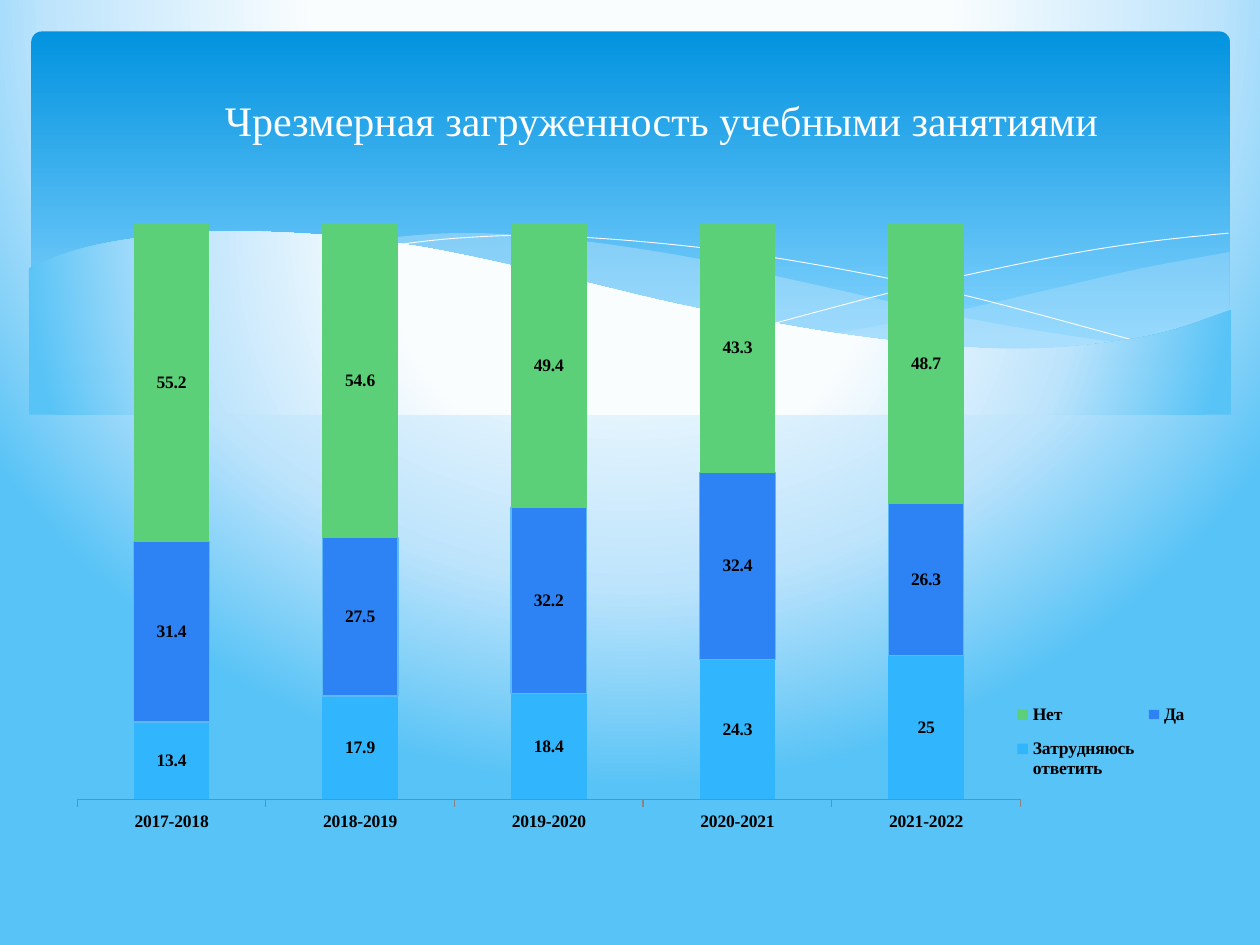
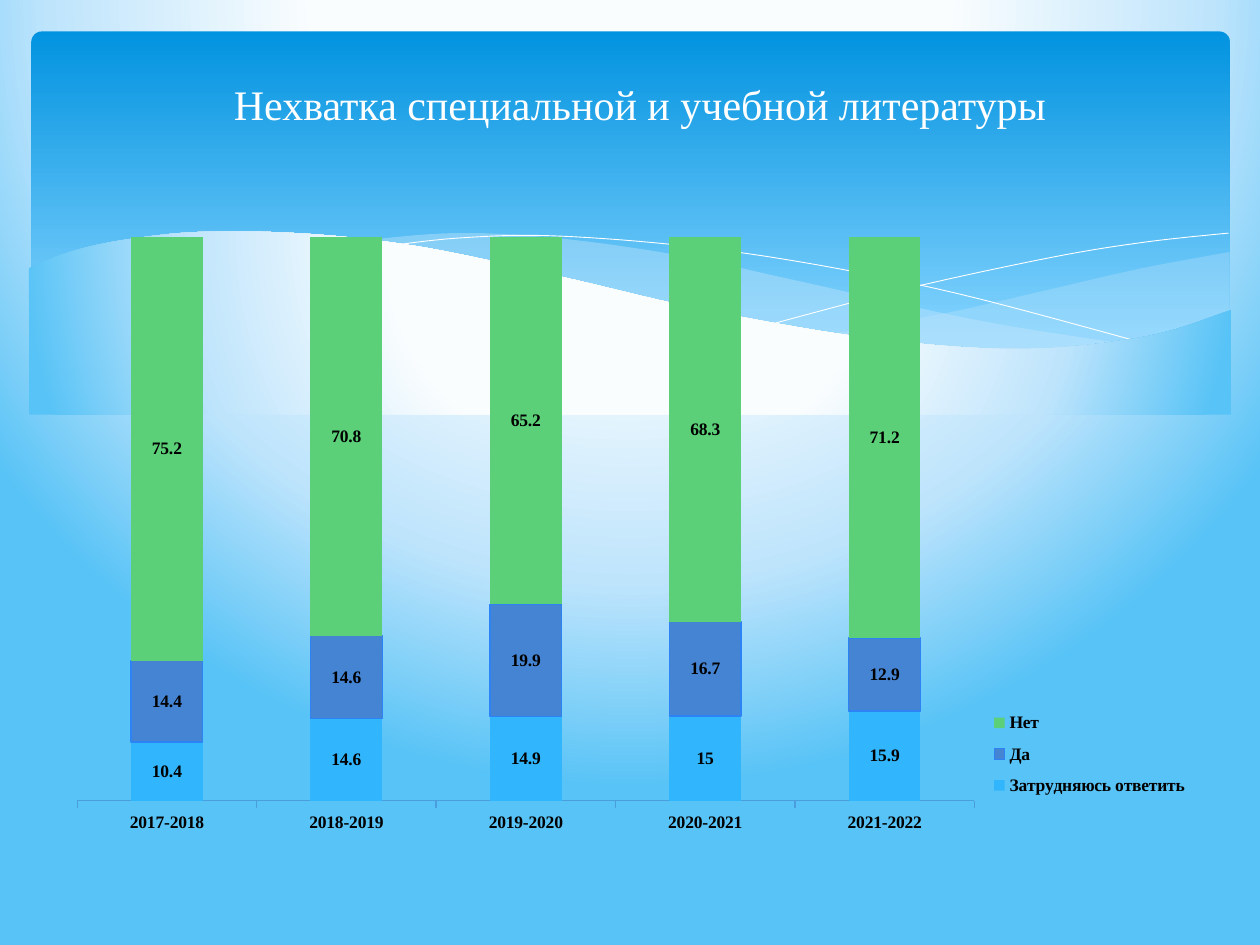
from dataclasses import dataclass
from typing import Any, Optional

from lxml import etree
from pptx import Presentation
from pptx import util as u
from pptx.chart import data as chart_data
from pptx.dml import color
from pptx.enum import chart as ce, shapes, text
from pptx.oxml import ns

COLORS = {
    "white": "FFFFFF", "black": "000000",
    "glow": "FAFDFE", "haze": "BEE4FC", "sky": "58C3F6",
    "band_top": "0293E0", "band_bottom": "83D3FE", "ribbon": "C6E7FC",
    "unsure": "31B6FD", "yes": "2D83F4", "yes_muted": "4584D3",
    "yes_edge": "5BBAF6", "no": "5BD078",
    "axis_gray": "868686", "axis_blue": "4A9EDC",
}
SERIF = "Times New Roman"
TITLE_FONT = {"name": SERIF, "size": u.Pt(24)}
CHART_FONT = {"name": "Cabin", "size": u.Pt(10)}
LABEL_FONT = {"name": SERIF, "size": u.Pt(10), "bold": True}
YEARS = [f"{year}-{year + 1}" for year in range(2017, 2022)]

SKY_STOPS = [(40, "glow"), (74, "haze"), (100, "sky")]
BAND_STOPS = [(0, "band_top"), (90, "band_bottom")]
RADIAL = ('<a:path path="circle">'
          '<a:fillToRect l="20000" t="-40000" r="20000" b="140000"/></a:path>')
DOWNWARD = '<a:lin ang="5400000" scaled="0"/>'
CURVE_STEPS = 8

Box = tuple[float, float, float, float]
Curve = list[tuple[float, float]]


@dataclass
class Wave:
    """Smooth edges through knots in inches; a wave without a fill is a white line."""
    edges: list[Curve]
    fill: Optional[str] = None
    opacity: int = 100


@dataclass
class Answer:
    name: str
    values: list[float]
    fill: str
    edge: Optional[str] = None


@dataclass
class Survey:
    title: str
    title_box: Box
    chart_box: Box
    plot_layout: Box
    legend_layout: Box
    axis_color: str
    answers: list[Answer]


WAVES = [
    Wave([[(9.76, 2), (9.06, 2.13), (8.32, 2.3), (7.53, 2.48), (6.61, 2.65)],
          [(6.61, 2.65), (7.45, 2.75), (8.35, 2.77), (9.05, 2.69), (9.76, 2.47)]],
         "ribbon", 29),
    Wave([[(8.93, 2.73), (7.75, 2.54), (6.29, 2.22), (5.41, 2.03), (4.42, 1.89),
           (3.61, 1.85), (2.86, 1.91)],
          [(2.86, 1.91), (3.83, 2.07), (4.91, 2.32), (6.18, 2.58), (7.22, 2.74),
           (8.18, 2.78), (8.93, 2.73)]], "ribbon", 40),
    Wave([[(3.09, 1.95), (3.63, 1.89), (4.33, 1.87), (5.33, 1.94), (6.36, 2.08),
           (7.6, 2.33), (9.07, 2.72)]]),
    Wave([[(6.13, 2.57), (7.2, 2.29), (8.36, 2.04), (9.1, 1.92), (9.75, 1.85)]]),
    Wave([[(9.77, 2.46), (9.1, 2.67), (8.09, 2.77), (6.88, 2.68), (5.55, 2.45),
           (4.47, 2.2), (3.4, 1.97), (2.5, 1.86), (1.61, 1.84), (0.95, 1.91),
           (0.52, 2.01), (0.23, 2.13)],
          [(0.23, 3.29), (9.77, 3.29)]], "sky"),
]

SURVEYS = [
    Survey("Чрезмерная загруженность учебными занятиями",
           (0.5, 0.36, 9.5, 1.18), (0.43, 1.62, 9.13, 5.08),
           (0.02, 0.03, 0.82, 0.9), (0.83, 0.76, 0.16, 0.16), "axis_gray",
           [Answer("Затрудняюсь ответить", [13.4, 17.9, 18.4, 24.3, 25], "unsure"),
            Answer("Да", [31.4, 27.5, 32.2, 32.4, 26.3], "yes", "yes_edge"),
            Answer("Нет", [55.2, 54.6, 49.4, 43.3, 48.7], "no")]),
    Survey("Нехватка специальной и учебной литературы",
           (0.33, 0.41, 9.5, 0.82), (0.43, 1.78, 9.13, 4.92),
           (0.02, 0.02, 0.78, 0.91), (0.81, 0.77, 0.18, 0.17), "axis_blue",
           [Answer("Затрудняюсь ответить", [10.4, 14.6, 14.9, 15, 15.9], "unsure"),
            Answer("Да", [14.4, 14.6, 19.9, 16.7, 12.9], "yes_muted", "yes"),
            Answer("Нет", [75.2, 70.8, 65.2, 68.3, 71.2], "no")]),
]


def rgb(name: str) -> color.RGBColor:
    return color.RGBColor.from_string(COLORS[name])


def inches(box: Box) -> list[u.Length]:
    return [u.Inches(length) for length in box]


def apply_format(target: Any, values: dict[str, Any]) -> None:
    for name, value in values.items():
        setattr(target, name, value)


def smooth(knots: Curve) -> Curve:
    """Return points on a Catmull-Rom spline through the knots."""
    padded = [knots[0], *knots, knots[-1]]
    points = [knots[0]]
    for segment in zip(padded, padded[1:], padded[2:], padded[3:]):
        for step in range(1, CURVE_STEPS + 1):
            t = step / CURVE_STEPS
            x, y = (b + t / 2 * (c - a + t * (2 * a - 5 * b + 4 * c - d
                                              + t * (3 * b - a - 3 * c + d)))
                    for a, b, c, d in zip(*segment))
            points.append((x, y))
    return points


def set_gradient(fill: Any, element: Any, stops: list[tuple[int, str]],
                 direction: str) -> None:
    """Fill with the stops; element is the XML that holds the fill."""
    fill.gradient()
    gradient = element.find(".//" + ns.qn("a:gradFill"))
    for child in list(gradient):
        gradient.remove(child)
    stop_xml = "".join(f'<a:gs pos="{position * 1000}"><a:srgbClr val="{COLORS[name]}"/></a:gs>'
                       for position, name in stops)
    wrapper = etree.fromstring(f'<a:gradFill {ns.nsdecls("a")}><a:gsLst>{stop_xml}</a:gsLst>'
                               f'{direction}</a:gradFill>')
    gradient.extend(list(wrapper))


def set_opacity(shape: Any, percent: int) -> None:
    fill_color = shape.element.spPr.find(ns.qn("a:solidFill"))[0]
    etree.SubElement(fill_color, ns.qn("a:alpha"), val=str(percent * 1000))


def draw_wave(slide: Any, wave: Wave) -> None:
    points = [(u.Inches(x), u.Inches(y)) for edge in wave.edges for x, y in smooth(edge)]
    builder = slide.shapes.build_freeform(*points[0])
    builder.add_line_segments(points[1:], close=wave.fill is not None)
    shape = builder.convert_to_shape()
    shape.shadow.inherit = False
    if wave.fill is None:
        shape.fill.background()
        shape.line.color.rgb = rgb("white")
        shape.line.width = u.Pt(0.5)
        return
    shape.line.fill.background()
    if wave.fill == "sky":
        set_gradient(shape.fill, shape.element, SKY_STOPS, RADIAL)
    else:
        shape.fill.solid()
        shape.fill.fore_color.rgb = rgb(wave.fill)
        set_opacity(shape, wave.opacity)


def draw_backdrop(slide: Any) -> None:
    set_gradient(slide.background.fill, slide.element, SKY_STOPS, RADIAL)
    band = slide.shapes.add_shape(shapes.MSO_SHAPE.ROUNDED_RECTANGLE,
                                  *inches((0.25, 0.25, 9.51, 2.7)))
    band.adjustments[0] = 0.03
    band.shadow.inherit = False
    band.line.fill.background()
    set_gradient(band.fill, band.element, BAND_STOPS, DOWNWARD)
    for wave in WAVES:
        draw_wave(slide, wave)


def add_title(slide: Any, survey: Survey) -> None:
    frame = slide.shapes.add_textbox(*inches(survey.title_box)).text_frame
    apply_format(frame, {"word_wrap": True, "vertical_anchor": text.MSO_ANCHOR.MIDDLE})
    paragraph = frame.paragraphs[0]
    paragraph.alignment = text.PP_ALIGN.CENTER
    run = paragraph.add_run()
    run.text = survey.title
    apply_format(run.font, TITLE_FONT)
    run.font.color.rgb = rgb("white")


def set_layout(parent: Any, index: int, box: Box, inner: bool = False) -> None:
    """Place a chart part at fractions of the chart's width and height."""
    for old in parent.findall(ns.qn("c:layout")):
        parent.remove(old)
    layout = etree.Element(ns.qn("c:layout"))
    manual = etree.SubElement(layout, ns.qn("c:manualLayout"))
    settings = {"layoutTarget": "inner"} if inner else {}
    settings |= {"xMode": "edge", "yMode": "edge"}
    settings |= dict(zip("xywh", map(str, box)))
    for tag, value in settings.items():
        etree.SubElement(manual, ns.qn(f"c:{tag}"), val=value)
    parent.insert(index, layout)


def format_answer(series: Any, answer: Answer) -> None:
    series.invert_if_negative = False
    series.format.fill.solid()
    series.format.fill.fore_color.rgb = rgb(answer.fill)
    if answer.edge:
        series.format.line.color.rgb = rgb(answer.edge)
        series.format.line.width = u.Pt(0.75)
    else:
        series.format.line.fill.background()
    series.data_labels.show_value = True
    apply_format(series.data_labels.font, LABEL_FONT)
    series.data_labels.font.color.rgb = rgb("black")


def add_survey_chart(slide: Any, survey: Survey) -> None:
    data = chart_data.CategoryChartData()
    data.categories = YEARS
    for answer in survey.answers:
        data.add_series(answer.name, answer.values)
    chart = slide.shapes.add_chart(ce.XL_CHART_TYPE.COLUMN_STACKED_100,
                                   *inches(survey.chart_box), data).chart
    apply_format(chart, {"has_title": False, "has_legend": True})
    apply_format(chart.font, CHART_FONT)
    chart.font.color.rgb = rgb("black")
    apply_format(chart.plots[0], {"gap_width": 150, "overlap": 100,
                                  "vary_by_categories": False})
    for series, answer in zip(chart.plots[0].series, survey.answers):
        format_answer(series, answer)

    apply_format(chart.value_axis, {"visible": False, "has_major_gridlines": False})
    axis = chart.category_axis
    axis.major_tick_mark = ce.XL_TICK_MARK.OUTSIDE
    apply_format(axis.tick_labels.font, LABEL_FONT)
    axis.format.line.color.rgb = rgb(survey.axis_color)
    axis.format.line.width = u.Pt(0.75)

    apply_format(chart.legend, {"position": ce.XL_LEGEND_POSITION.RIGHT,
                                "include_in_layout": False})
    apply_format(chart.legend.font, LABEL_FONT)
    set_layout(chart.element.find(".//" + ns.qn("c:plotArea")), 0, survey.plot_layout, True)
    set_layout(chart.element.find(".//" + ns.qn("c:legend")), 1, survey.legend_layout)


def main() -> None:
    presentation = Presentation()
    presentation.slide_width = u.Inches(10)
    presentation.slide_height = u.Inches(7.5)
    for survey in SURVEYS:
        slide = presentation.slides.add_slide(presentation.slide_layouts[6])
        draw_backdrop(slide)
        add_title(slide, survey)
        add_survey_chart(slide, survey)
    presentation.save("out.pptx")


if __name__ == "__main__":
    main()
